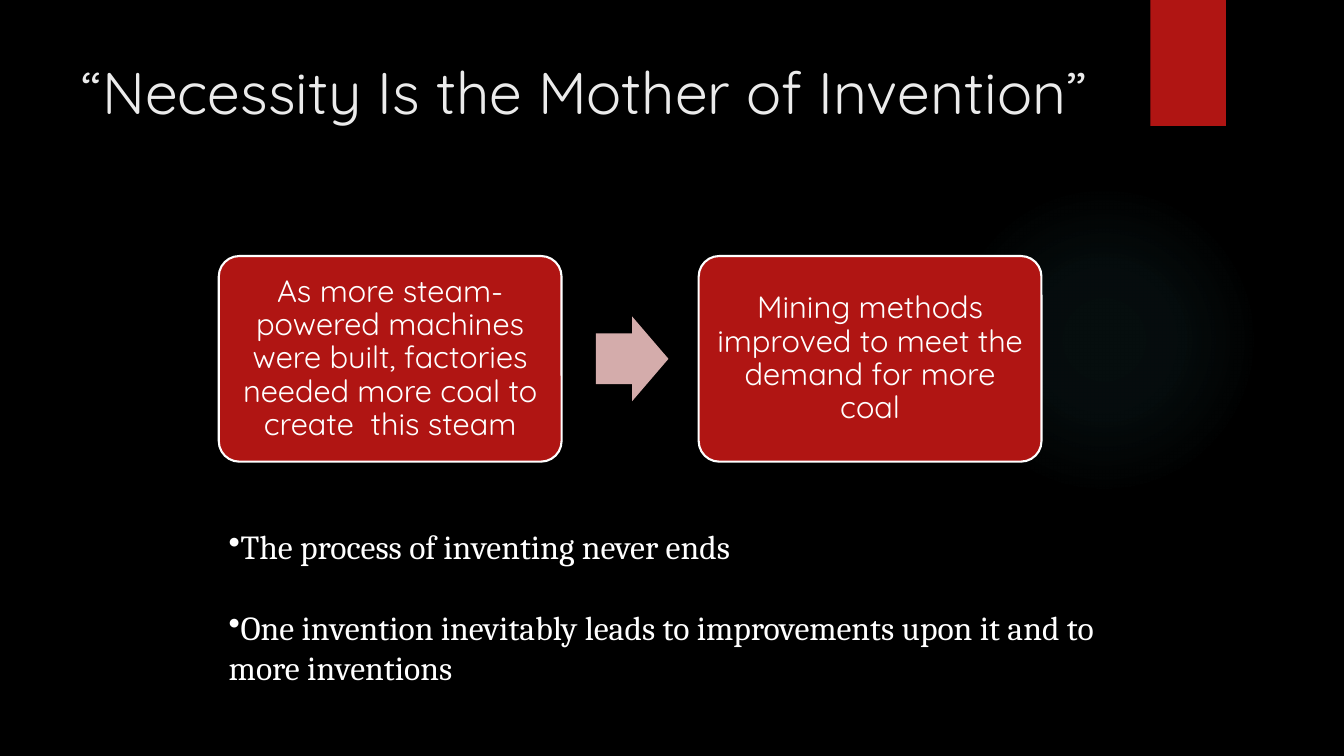
from lxml.etree import SubElement
from pptx import Presentation
from pptx.dml.color import RGBColor
from pptx.enum.shapes import MSO_SHAPE
from pptx.enum.text import MSO_ANCHOR, PP_ALIGN
from pptx.oxml import parse_xml
from pptx.oxml.ns import nsdecls, qn
from pptx.util import Inches, Pt

TITLE = "“Necessity Is the Mother of Invention”"
STEPS = [
    "As more steam-powered machines were built, factories needed more coal to create  this steam",
    "Mining methods improved to meet the demand for more coal",
]
POINTS = [
    "The process of inventing never ends",
    "One invention inevitably leads to improvements upon it and to more inventions",
]
RED, PINK, WHITE, BLACK = "B01513", "D4ACAB", "FFFFFF", "000000"
TITLE_COLOR, GLOW_COLOR = "EBEBEB", "50B9C1"
GLOW_STOPS = [(0, 7), (36, 6), (69, 0)]
HEADING_FONT, BODY_FONT = "Quicksand", "Cambria"

STEP_LEFT, STEP_TOP, STEP_WIDTH, STEP_HEIGHT = 2.17, 2.54, 3.4, 2.04
STEP_PITCH = 4.76
ARROW_OFFSET, ARROW_WIDTH, ARROW_HEIGHT = 3.74, 0.72, 0.84


def rgb(color):
    return RGBColor.from_string(color)


def style(paragraph, name, size, color):
    paragraph.font.name = name
    paragraph.font.size = Pt(size)
    paragraph.font.color.rgb = rgb(color)


def add_block(slide, preset, left, top, width, height, color):
    block = slide.shapes.add_shape(
        preset, Inches(left), Inches(top), Inches(width), Inches(height))
    block.shadow.inherit = False
    block.fill.solid()
    block.fill.fore_color.rgb = rgb(color)
    block.line.fill.background()
    return block


def add_glow(slide):
    glow = add_block(slide, MSO_SHAPE.OVAL, 9.41, 1.83, 3.08, 3.08, GLOW_COLOR)
    stops = "".join(
        f'<a:gs pos="{position * 1000}"><a:srgbClr val="{GLOW_COLOR}">'
        f'<a:alpha val="{opacity * 1000}"/></a:srgbClr></a:gs>'
        for position, opacity in GLOW_STOPS)
    gradient = parse_xml(
        f'<a:gradFill {nsdecls("a")} rotWithShape="1"><a:gsLst>{stops}</a:gsLst>'
        '<a:path path="circle"><a:fillToRect l="50000" t="50000" r="50000" b="50000"/>'
        '</a:path></a:gradFill>')
    properties = glow.element.spPr
    properties.replace(properties.find(qn("a:solidFill")), gradient)


def add_title(slide):
    title = slide.shapes.title
    title.left, title.top = Inches(0.71), Inches(0.5)
    title.width, title.height = Inches(10.29), Inches(1.53)
    frame = title.text_frame
    frame.text = TITLE
    frame.vertical_anchor = MSO_ANCHOR.TOP
    heading = frame.paragraphs[0]
    heading.alignment = PP_ALIGN.LEFT
    style(heading, HEADING_FONT, 42, TITLE_COLOR)


def add_step(slide, left, wording):
    step = add_block(slide, MSO_SHAPE.ROUNDED_RECTANGLE,
                     left, STEP_TOP, STEP_WIDTH, STEP_HEIGHT, RED)
    step.adjustments[0] = 0.1
    step.line.color.rgb = rgb(WHITE)
    step.line.width = Pt(1.5)
    frame = step.text_frame
    frame.word_wrap = True
    frame.vertical_anchor = MSO_ANCHOR.MIDDLE
    frame.margin_left = frame.margin_right = Inches(0.09)
    frame.margin_top = frame.margin_bottom = Inches(0.09)
    frame.text = wording
    label = frame.paragraphs[0]
    label.alignment = PP_ALIGN.CENTER
    label.line_spacing = 0.9
    style(label, HEADING_FONT, 22, WHITE)


def add_process(slide):
    for index, wording in enumerate(STEPS):
        left = STEP_LEFT + index * STEP_PITCH
        add_step(slide, left, wording)
        if index < len(STEPS) - 1:
            arrow_top = STEP_TOP + (STEP_HEIGHT - ARROW_HEIGHT) / 2
            arrow = add_block(slide, MSO_SHAPE.RIGHT_ARROW, left + ARROW_OFFSET,
                              arrow_top, ARROW_WIDTH, ARROW_HEIGHT, PINK)
            arrow.adjustments[0] = 0.6
            arrow.adjustments[1] = 0.5


def add_points(slide):
    frame = slide.shapes.add_textbox(
        Inches(2.17), Inches(5.17), Inches(9), Inches(1.72)).text_frame
    frame.word_wrap = True
    for index, wording in enumerate(POINTS):
        point = frame.paragraphs[0] if index == 0 else frame.add_paragraph()
        point.text = wording
        if index:
            point.space_before = Pt(29)
        SubElement(point._p.get_or_add_pPr(), qn("a:buChar")).set("char", "•")
        style(point, BODY_FONT, 24, WHITE)


def main():
    deck = Presentation()
    deck.slide_width, deck.slide_height = Inches(13.33), Inches(7.5)
    slide = deck.slides.add_slide(deck.slide_layouts[5])
    slide.background.fill.solid()
    slide.background.fill.fore_color.rgb = rgb(BLACK)
    add_glow(slide)
    add_block(slide, MSO_SHAPE.RECTANGLE, 11.41, 0, 0.75, 1.25, RED)
    add_title(slide)
    add_process(slide)
    add_points(slide)
    deck.save("out.pptx")


if __name__ == "__main__":
    main()
